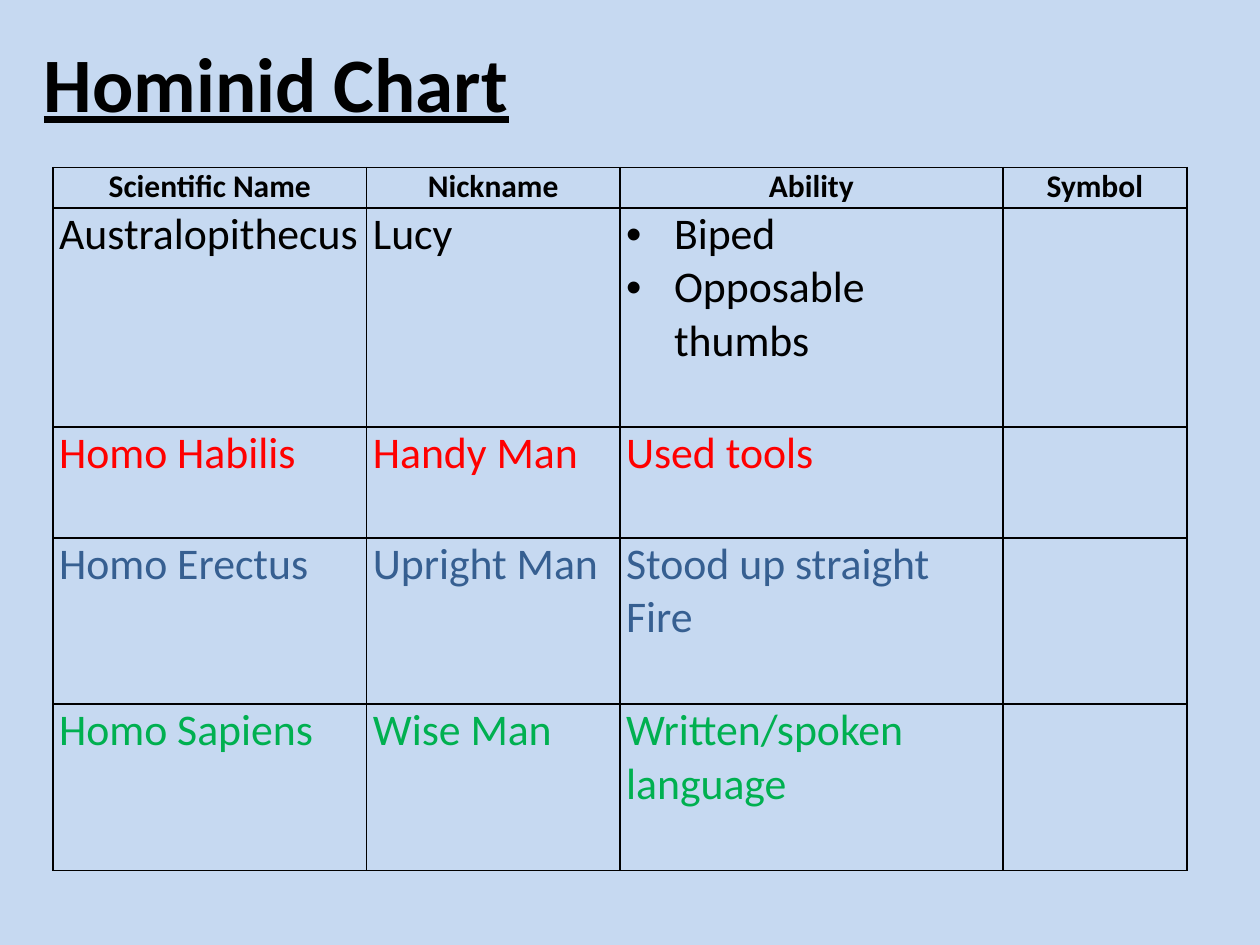
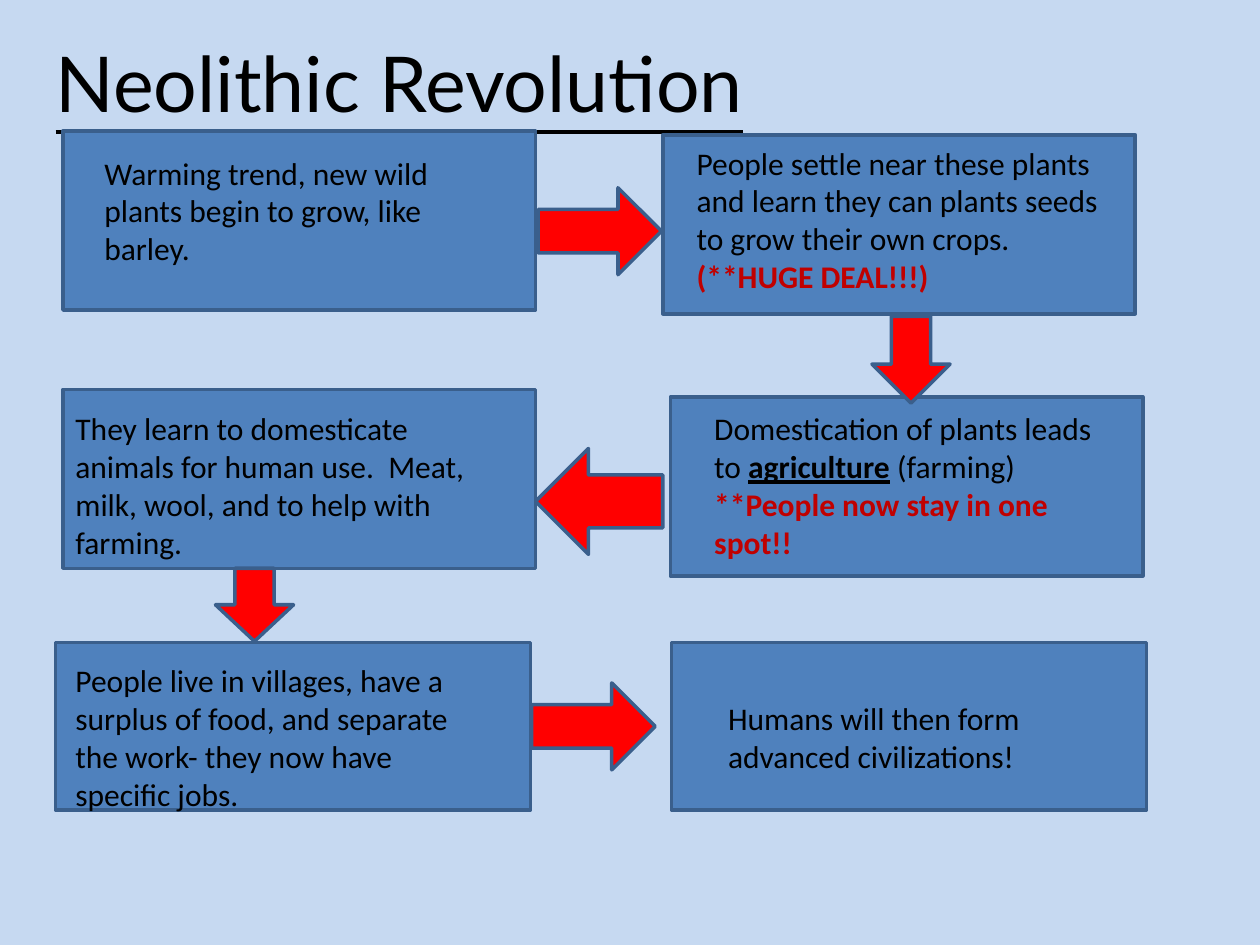
from dataclasses import dataclass

from lxml import etree
from pptx import Presentation
from pptx.dml.color import RGBColor
from pptx.enum.shapes import MSO_SHAPE
from pptx.enum.text import MSO_ANCHOR, MSO_AUTO_SIZE, PP_ALIGN
from pptx.oxml.ns import qn
from pptx.util import Inches, Pt

CENTER, LEFT = PP_ALIGN.CENTER, PP_ALIGN.LEFT
MIDDLE = MSO_ANCHOR.MIDDLE
GROW = MSO_AUTO_SIZE.SHAPE_TO_FIT_TEXT
PROCESS = MSO_SHAPE.FLOWCHART_PROCESS
RIGHT_ARROW = MSO_SHAPE.RIGHT_ARROW
DOWN_ARROW = MSO_SHAPE.DOWN_ARROW
LEFT_ARROW = MSO_SHAPE.LEFT_ARROW


@dataclass(frozen=True)
class Theme:
    background: str = "C6D9F1"
    ink: str = "000000"
    stage: str = "4F81BD"
    outline: str = "3A5F8C"
    arrow: str = "FF0000"
    emphasis: str = "C00000"
    habilis: str = "FF0000"
    erectus: str = "365F91"
    sapiens: str = "00B050"
    font: str = "Calibri"
    alternate_font: str = "Lato"
    title_size: int = 44
    cell_size: int = 25
    text_size: int = 18
    outline_width: int = 2
    border_width: int = 1


THEME = Theme()


@dataclass(frozen=True)
class Box:
    left: float
    top: float
    width: float
    height: float

    def lengths(self):
        return [Inches(n) for n in (self.left, self.top, self.width, self.height)]


@dataclass(frozen=True)
class Span:
    text: str
    color: str = THEME.ink
    bold: bool = False
    underline: bool = False


COLUMN_WIDTHS = [2.49, 2.01, 3.04, 1.46]
ROW_HEIGHTS = [0.32, 1.74, 0.88, 1.32, 1.32]
HEADINGS = ["Scientific Name", "Nickname", "Ability", "Symbol"]
HOMINIDS = [
    (THEME.ink, ["Australopithecus", "Lucy", "Biped\nOpposable thumbs", ""]),
    (THEME.habilis, ["Homo Habilis", "Handy Man", "Used tools", ""]),
    (THEME.erectus, ["Homo Erectus", "Upright Man", "Stood up straight\nFire", ""]),
    (THEME.sapiens, ["Homo Sapiens", "Wise Man", "Written/spoken language", ""]),
]

STAGES = [
    (Box(0.5, 1.04, 3.75, 1.42), (0.23, 0.13), 3,
     [[Span("Warming trend, new wild plants begin to grow, like barley.")]]),
    (Box(5.26, 1.07, 3.75, 1.42), (0.17, 0.02), 4,
     [[Span("People settle near these plants and learn they can plants seeds "
            "to grow their own crops. "),
       Span("(**HUGE DEAL!!!)", THEME.emphasis, bold=True)]]),
    (Box(5.32, 3.15, 3.75, 1.42), (0.25, 0.05), 4,
     [[Span("Domestication of plants leads to "),
       Span("agriculture", bold=True, underline=True),
       Span(" (farming)")],
      [Span("**People now stay in one spot!!", THEME.emphasis, bold=True)]]),
    (Box(0.5, 3.09, 3.75, 1.42), (0, 0.11), 4,
     [[Span("They learn to domesticate animals for human use.  Meat, milk, "
            "wool, and to help with farming.")]]),
    (Box(0.44, 5.1, 3.77, 1.33), (0.06, 0.1), 4,
     [[Span("People live in villages, have a surplus of food, and separate "
            "the work- they now have specific jobs.")]]),
    (Box(5.33, 5.1, 3.77, 1.33), (0.35, 0.4), 2,
     [[Span("Humans will then form advanced civilizations!")]]),
]
ARROWS = [
    (RIGHT_ARROW, Box(4.27, 1.49, 0.98, 0.69)),
    (DOWN_ARROW, Box(6.92, 2.51, 0.62, 0.69)),
    (LEFT_ARROW, Box(4.25, 3.56, 1.01, 0.84)),
    (DOWN_ARROW, Box(1.71, 4.51, 0.62, 0.58)),
    (RIGHT_ARROW, Box(4.22, 5.42, 0.98, 0.69)),
]
TEXT_WIDTH = 3.42
LINE_HEIGHT = 0.3
TEXT_PADDING = 0.11


def style_font(font, size, color=THEME.ink, bold=False, underline=False, name=THEME.font):
    font.name = name
    font.size = Pt(size)
    font.color.rgb = RGBColor.from_string(color)
    font.bold = bold
    font.underline = underline


def add_page(deck):
    page = deck.slides.add_slide(deck.slide_layouts[6])
    page.background.fill.solid()
    page.background.fill.fore_color.rgb = RGBColor.from_string(THEME.background)
    return page


def add_title(page, box, text, align=LEFT, bold=False, name=THEME.font):
    frame = page.shapes.add_textbox(*box.lengths()).text_frame
    frame.word_wrap = True
    frame.vertical_anchor = MIDDLE
    frame.text = text
    para = frame.paragraphs[0]
    para.alignment = align
    style_font(para.runs[0].font, THEME.title_size, bold=bold, underline=True, name=name)


def add_borders(cell):
    properties = cell._tc.get_or_add_tcPr()
    for index, side in enumerate(("lnL", "lnR", "lnT", "lnB")):
        line = etree.Element(qn(f"a:{side}"), w=str(Pt(THEME.border_width)))
        fill = etree.SubElement(line, qn("a:solidFill"))
        etree.SubElement(fill, qn("a:srgbClr"), val=THEME.ink)
        properties.insert(index, line)


def add_bullet(para):
    properties = para._p.get_or_add_pPr()
    indent = Inches(0.38)
    properties.set("marL", str(indent))
    properties.set("indent", str(-indent))
    etree.SubElement(properties, qn("a:buFont"), typeface="Arial")
    etree.SubElement(properties, qn("a:buChar"), char="•")


def fill_cell(cell, text, size, color, align=LEFT, bold=False):
    cell.fill.background()
    add_borders(cell)
    cell.margin_left = cell.margin_right = Inches(0.05)
    cell.margin_top = cell.margin_bottom = 0
    cell.text_frame.text = text
    for para in cell.text_frame.paragraphs:
        para.alignment = align
        for run in para.runs:
            style_font(run.font, size, color, bold)


def add_hominid_table(page, box):
    table = page.shapes.add_table(
        len(ROW_HEIGHTS), len(COLUMN_WIDTHS), *box.lengths()).table
    table.horz_banding = False
    for column, width in zip(table.columns, COLUMN_WIDTHS):
        column.width = Inches(width)
    for row, height in zip(table.rows, ROW_HEIGHTS):
        row.height = Inches(height)
    for cell, heading in zip(table.rows[0].cells, HEADINGS):
        fill_cell(cell, heading, THEME.text_size, THEME.ink, CENTER, bold=True)
    for row_index, (color, texts) in enumerate(HOMINIDS, start=1):
        for cell, text in zip(table.rows[row_index].cells, texts):
            fill_cell(cell, text, THEME.cell_size, color)
    for para in table.cell(1, 2).text_frame.paragraphs:
        add_bullet(para)


def add_outlined_shape(page, kind, box, color):
    shape = page.shapes.add_shape(kind, *box.lengths())
    shape.shadow.inherit = False
    shape.fill.solid()
    shape.fill.fore_color.rgb = RGBColor.from_string(color)
    shape.line.color.rgb = RGBColor.from_string(THEME.outline)
    shape.line.width = Pt(THEME.outline_width)


def add_stage(page, box, offset, line_count, paragraphs):
    add_outlined_shape(page, PROCESS, box, THEME.stage)
    text_box = Box(box.left + offset[0], box.top + offset[1],
                   TEXT_WIDTH, TEXT_PADDING + LINE_HEIGHT * line_count)
    frame = page.shapes.add_textbox(*text_box.lengths()).text_frame
    frame.word_wrap = True
    frame.auto_size = GROW
    for index, spans in enumerate(paragraphs):
        para = frame.add_paragraph() if index else frame.paragraphs[0]
        for span in spans:
            run = para.add_run()
            run.text = span.text
            style_font(run.font, THEME.text_size, span.color, span.bold, span.underline)


def build_hominid_page(deck):
    page = add_page(deck)
    add_title(page, Box(0.25, 0.02, 9, 1.25), "Hominid Chart", bold=True)
    add_hominid_table(page, Box(0.42, 1.33, sum(COLUMN_WIDTHS), sum(ROW_HEIGHTS)))


def build_revolution_page(deck):
    page = add_page(deck)
    add_title(page, Box(-1.33, 0.02, 9, 1.25), "Neolithic Revolution",
              CENTER, name=THEME.alternate_font)
    for stage in STAGES:
        add_stage(page, *stage)
    for kind, box in ARROWS:
        add_outlined_shape(page, kind, box, THEME.arrow)


def main():
    deck = Presentation()
    deck.slide_width, deck.slide_height = Inches(10), Inches(7.5)
    build_hominid_page(deck)
    build_revolution_page(deck)
    deck.save("out.pptx")


if __name__ == "__main__":
    main()
